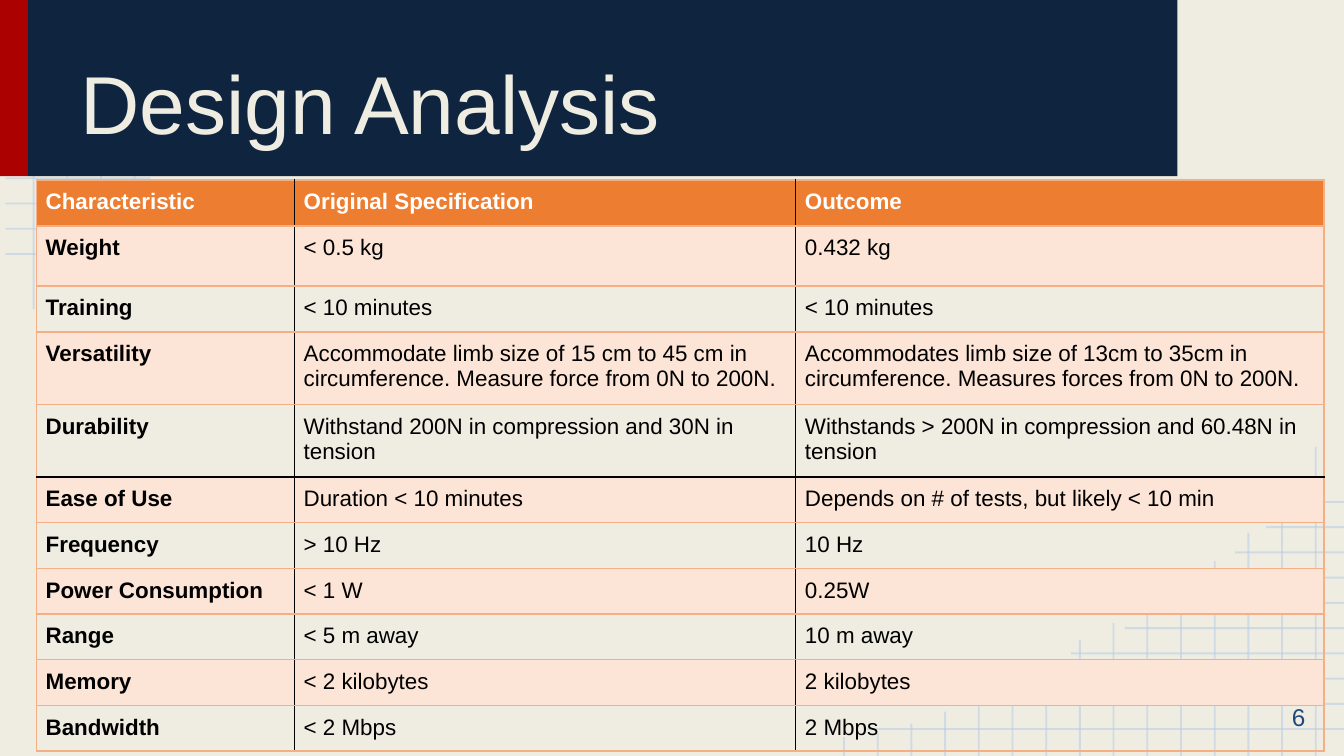
from dataclasses import dataclass

from lxml.etree import SubElement
from pptx import Presentation
from pptx.dml.color import RGBColor
from pptx.enum.shapes import MSO_CONNECTOR as Connector, MSO_SHAPE as Shape
from pptx.enum.text import MSO_ANCHOR as Anchor, PP_ALIGN as Align
from pptx.oxml import parse_xml
from pptx.oxml.ns import nsdecls, qn
from pptx.util import Inches, Pt


@dataclass(frozen=True)
class Theme:
    font: str = "Arial"
    paper: str = "EFEDE2"
    navy: str = "0F243E"
    red: str = "AB0101"
    grid: str = "B7CCE4"
    page_number: str = "1F497D"
    header: str = "ED7D31"
    band: str = "FCE4D6"
    rule: str = "F4B084"
    white: str = "FFFFFF"
    black: str = "000000"
    title_size: int = 44
    number_size: int = 13
    table_size: int = 12
    grid_opacity: int = 54


class SlideBuilder:
    def __init__(self, slide, theme):
        self.slide = slide
        self.theme = theme
        slide.background.fill.solid()
        slide.background.fill.fore_color.rgb = RGBColor.from_string(theme.paper)

    def style_text(self, frame, size, color, bold=False, align=Align.LEFT):
        for paragraph in frame.paragraphs:
            paragraph.alignment = align
            for run in paragraph.runs:
                run.font.name = self.theme.font
                run.font.size = Pt(size)
                run.font.bold = bold
                run.font.color.rgb = RGBColor.from_string(color)

    def grid_line(self, start, end):
        line = self.slide.shapes.add_connector(
            Connector.STRAIGHT, *(Inches(value) for value in (*start, *end)))
        line.line.width = Pt(1)
        line.line.color.rgb = RGBColor.from_string(self.theme.grid)
        properties = line._element.spPr
        color = properties.find(".//" + qn("a:srgbClr"))
        SubElement(color, qn("a:alpha"), val=str(self.theme.grid_opacity * 1000))
        SubElement(properties, qn("a:effectLst"))

    def block(self, box, color):
        block = self.slide.shapes.add_shape(
            Shape.RECTANGLE, *(Inches(value) for value in box))
        block.shadow.inherit = False
        block.fill.solid()
        block.fill.fore_color.rgb = RGBColor.from_string(color)
        block.line.fill.background()

    def text(self, words, box, size, color, anchor, align=Align.LEFT):
        frame = self.slide.shapes.add_textbox(
            *(Inches(value) for value in box)).text_frame
        frame.word_wrap = True
        frame.vertical_anchor = anchor
        frame.margin_left = frame.margin_right = Inches(0.1)
        frame.margin_top = frame.margin_bottom = Inches(0.1)
        frame.text = words
        self.style_text(frame, size, color, align=align)

    def cell(self, cell, words, fill, color, bold, borders):
        """Fill one table cell; borders are colours: left, right, top, bottom."""
        cell.margin_left = cell.margin_right = Inches(0.07)
        cell.margin_top = cell.margin_bottom = Inches(0.07)
        cell.text = words
        self.style_text(cell.text_frame, self.theme.table_size, color, bold)
        if fill:
            cell.fill.solid()
            cell.fill.fore_color.rgb = RGBColor.from_string(fill)
        else:
            cell.fill.background()
        properties = cell._tc.get_or_add_tcPr()
        for position, (side, border) in enumerate(zip("LRTB", borders)):
            properties.insert(position, parse_xml(
                f'<a:ln{side} {nsdecls("a")} w="{Pt(1)}"><a:solidFill>'
                f'<a:srgbClr val="{border}"/></a:solidFill></a:ln{side}>'))

    def table(self, rows, box, widths, heights, black_rule_after):
        theme = self.theme
        frame = self.slide.shapes.add_table(
            len(rows), len(widths), *(Inches(value) for value in box))
        table = frame.table
        table.first_row = table.horz_banding = False
        for column, width in zip(table.columns, widths):
            column.width = Inches(width)
        for row, height in zip(table.rows, heights):
            row.height = Inches(height)
        frame.width, frame.height = Inches(box[2]), Inches(box[3])
        last_column = len(widths) - 1
        for r, row in enumerate(rows):
            is_header = r == 0
            fill = theme.header if is_header else theme.band if r % 2 else None
            color = theme.white if is_header else theme.black
            for c, words in enumerate(row):
                borders = (
                    theme.rule if c == 0 else theme.black,
                    theme.rule if c == last_column else theme.black,
                    theme.black if r == black_rule_after + 1 else theme.rule,
                    theme.black if r == black_rule_after else theme.rule)
                self.cell(table.cell(r, c), words, fill, color,
                          is_header or c == 0, borders)


SLIDE_WIDTH = 10
SLIDE_HEIGHT = SLIDE_WIDTH * 9 / 16
GRID_LEFT = 0.04
ROW_ENDS = [3.59, 2.95, 2.41, 2.07, 1.67, 1.37, 1.12, 0.85, 0.62, 0.32]
COLUMN_ENDS = [2.3, 2.03, 1.66, 1.45, 1.29, 1.16, 0.99, 0.86,
               0.72, 0.62, 0.48, 0.33, 0.24, 0.17, 0.14]

SPECIFICATIONS = [
    ("Characteristic", "Original Specification", "Outcome"),
    ("Weight", "< 0.5 kg", "0.432 kg"),
    ("Training", "< 10 minutes", "< 10 minutes"),
    ("Versatility",
     "Accommodate limb size of 15 cm to 45 cm in circumference. "
     "Measure force from 0N to 200N.",
     "Accommodates limb size of 13cm to 35cm in circumference. "
     "Measures forces from 0N to 200N."),
    ("Durability", "Withstand 200N in compression and 30N in tension",
     "Withstands > 200N in compression and 60.48N in tension"),
    ("Ease of Use", "Duration < 10 minutes",
     "Depends on # of tests, but likely < 10 min"),
    ("Frequency", "> 10 Hz", "10 Hz"),
    ("Power Consumption", "< 1 W", "0.25W"),
    ("Range", "< 5 m away", "10 m away"),
    ("Memory", "< 2 kilobytes", "2 kilobytes"),
    ("Bandwidth", "< 2 Mbps", "2 Mbps"),
]
SPECIAL_HEIGHTS = {"Weight": 0.45, "Durability": 0.22, "Power Consumption": 0.24}


def corner_grid():
    """Return the lines of the top left grid as pairs of points."""
    row_gap = 1.69 / (len(ROW_ENDS) - 1)
    column_gap = 3.51 / (len(COLUMN_ENDS) - 1)
    rows = [((GRID_LEFT, 0.2 + i * row_gap), (end, 0.2 + i * row_gap))
            for i, end in enumerate(ROW_ENDS)]
    columns = [((0.25 + i * column_gap, end), (0.25 + i * column_gap, 0))
               for i, end in enumerate(COLUMN_ENDS)]
    return rows + columns


def opposite(point):
    """Turn a point of the top left grid round to the bottom right corner."""
    return SLIDE_WIDTH + GRID_LEFT - point[0], SLIDE_HEIGHT - point[1]


def main():
    presentation = Presentation()
    presentation.slide_width = Inches(SLIDE_WIDTH)
    presentation.slide_height = Inches(SLIDE_HEIGHT)
    theme = Theme()
    builder = SlideBuilder(
        presentation.slides.add_slide(presentation.slide_layouts[6]), theme)

    grid = corner_grid()
    for start, end in grid:
        builder.grid_line(start, end)
    for start, end in grid:
        builder.grid_line(opposite(start), opposite(end))

    builder.block((0, -0.01, 0.21, 1.32), theme.red)
    builder.block((0.21, -0.01, 8.55, 1.32), theme.navy)
    builder.text("Design Analysis", (0.5, 0.11, 8, 1.11),
                 theme.title_size, theme.paper, Anchor.BOTTOM)
    builder.text("6", (9.21, 5.05, 0.6, 0.57), theme.number_size,
                 theme.page_number, Anchor.MIDDLE, Align.RIGHT)
    heights = [SPECIAL_HEIGHTS.get(row[0], 0.32) for row in SPECIFICATIONS]
    builder.table(SPECIFICATIONS, (0.27, 1.34, 9.57, 4.24),
                  (1.92, 3.73, 3.93), heights, black_rule_after=4)
    presentation.save("out.pptx")


if __name__ == "__main__":
    main()
